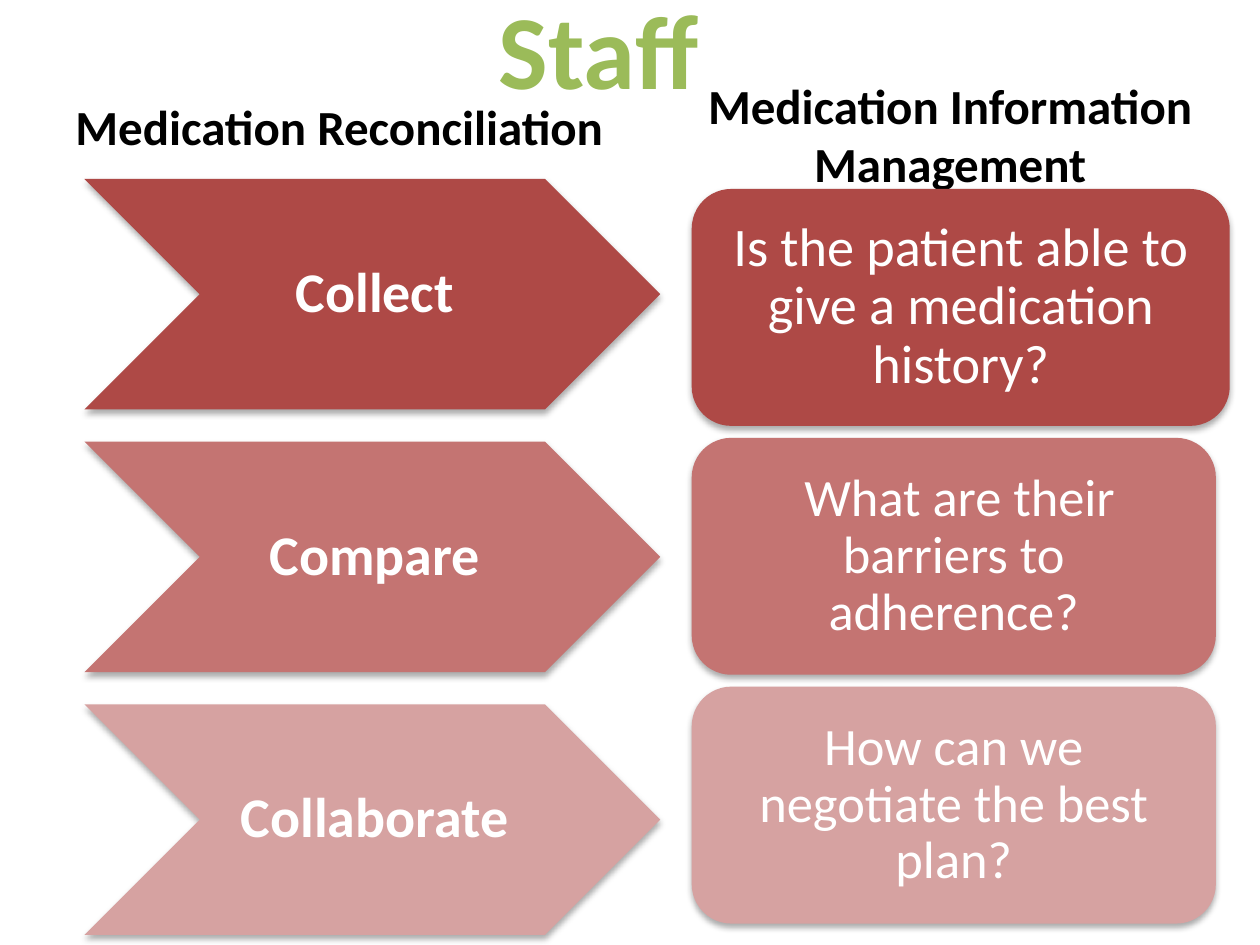
from collections import namedtuple

from lxml.etree import SubElement
from pptx import Presentation
from pptx.dml.color import RGBColor
from pptx.enum.shapes import MSO_SHAPE
from pptx.enum.text import MSO_ANCHOR, PP_ALIGN
from pptx.oxml.ns import qn
from pptx.util import Inches, Pt

COLUMNS, ROWS = 100, 75
SLIDE_WIDTH, SLIDE_HEIGHT = Inches(10), Inches(7.5)
Box = namedtuple("Box", "left top width height")

WHITE, BLACK, GREEN = "FFFFFF", "000000", "9BBB59"
STEP_FILLS = ["AE4946", "C47472", "D6A2A1"]
STEPS = ["Collect", "Compare", "Collaborate"]
QUESTIONS = [
    "Is the patient able to give a medication history?",
    " What are their barriers to adherence?",
    "How can we negotiate the best plan?",
]
QUESTION_WIDTHS = [42.7, 41.6, 41.6]
QUESTION_SIZES = [31, 30, 30]


def color(value):
    """Return the colour for a hex string."""
    return RGBColor.from_string(value)


def place(box):
    """Turn a box in grid units into slide lengths."""
    column, row = SLIDE_WIDTH / COLUMNS, SLIDE_HEIGHT / ROWS
    return [
        round(box.left * column),
        round(box.top * row),
        round(box.width * column),
        round(box.height * row),
    ]


def apply(target, values):
    """Set each attribute in a dict of format values."""
    for name, value in values.items():
        setattr(target, name, value)


def write(shape, text, size, fill, bold, frame_format, paragraph_format):
    """Fill a shape with one formatted paragraph."""
    apply(shape.text_frame, {"word_wrap": True, **frame_format})
    paragraph = shape.text_frame.paragraphs[0]
    apply(paragraph, paragraph_format)
    run = paragraph.add_run()
    run.text = text
    apply(run.font, {"name": "Calibri", "size": Pt(size), "bold": bold})
    run.font.color.rgb = color(fill)


def add_shadow(shape):
    """Give a shape a soft shadow straight below it."""
    shape.shadow.inherit = False
    effects = shape._element.spPr.find(qn("a:effectLst"))
    shadow = SubElement(
        effects, qn("a:outerShdw"), blurRad=str(Pt(3.5)), dist=str(Pt(2.2)),
        dir="5400000", rotWithShape="0",
    )
    black = SubElement(shadow, qn("a:srgbClr"), val=BLACK)
    SubElement(black, qn("a:alpha"), val="32000")


def add_heading(slide, box, text, size, fill, anchor, alignment):
    """Add a bold line of text in a box."""
    shape = slide.shapes.add_textbox(*place(box))
    write(shape, text, size, fill, True,
          {"vertical_anchor": anchor}, {"alignment": alignment})


def add_block(slide, box, kind, fill, text, size, bold, margins):
    """Add a filled, shadowed shape with centred white text."""
    shape = slide.shapes.add_shape(kind, *place(box))
    shape.fill.solid()
    shape.fill.fore_color.rgb = color(fill)
    shape.line.fill.background()
    add_shadow(shape)
    left, top, right, bottom = map(Inches, margins)
    write(shape, text, size, WHITE, bold,
          {"vertical_anchor": MSO_ANCHOR.MIDDLE, "margin_left": left,
           "margin_top": top, "margin_right": right, "margin_bottom": bottom},
          {"alignment": PP_ALIGN.CENTER, "line_spacing": 0.9})


def add_steps(slide, box):
    """Stack the reconciliation chevrons in a box."""
    height = 18.3
    pitch = (box.height - height) / (len(STEPS) - 1)
    for index, (step, fill) in enumerate(zip(STEPS, STEP_FILLS)):
        row = Box(box.left, box.top + index * pitch, box.width, height)
        add_block(slide, row, MSO_SHAPE.CHEVRON, fill, step, 32, True,
                  (0.04, 0.02, 0, 0.02))


def add_questions(slide, box):
    """Stack the patient questions in a box."""
    height = 18.8
    pitch = (box.height - height) / (len(QUESTIONS) - 1)
    rows = zip(QUESTIONS, STEP_FILLS, QUESTION_WIDTHS, QUESTION_SIZES)
    for index, (question, fill, width, size) in enumerate(rows):
        row = Box(box.left, box.top + index * pitch, width, height)
        add_block(slide, row, MSO_SHAPE.ROUNDED_RECTANGLE, fill, question,
                  size, False, (0.12, 0.06, 0.12, 0.06))


def main():
    """Build and save the staff slide."""
    presentation = Presentation()
    apply(presentation, {"slide_width": SLIDE_WIDTH, "slide_height": SLIDE_HEIGHT})
    slide = presentation.slides.add_slide(presentation.slide_layouts[6])
    add_heading(slide, Box(2.5, -2.5, 90, 12.5), "Staff", 60, GREEN,
                MSO_ANCHOR.MIDDLE, PP_ALIGN.CENTER)
    add_heading(slide, Box(5, 5.8, 44.2, 7), "Medication Reconciliation", 28,
                BLACK, MSO_ANCHOR.BOTTOM, PP_ALIGN.LEFT)
    add_steps(slide, Box(6.7, 14.2, 45.7, 60))
    add_heading(slide, Box(50.8, 8.8, 49.2, 7), "Medication Information Management",
                28, BLACK, MSO_ANCHOR.BOTTOM, PP_ALIGN.CENTER)
    add_questions(slide, Box(54.9, 15, 42.7, 58.3))
    presentation.save("out.pptx")


if __name__ == "__main__":
    main()
